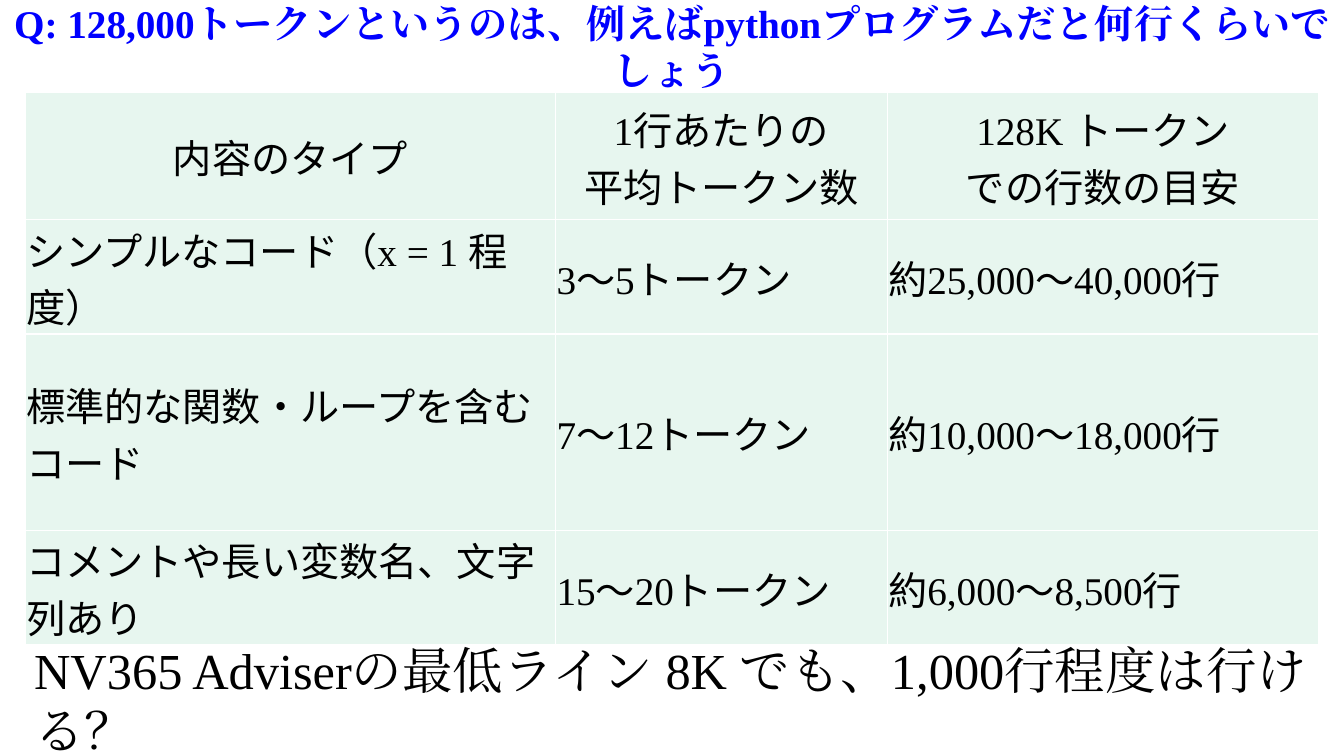
from dataclasses import dataclass

from lxml import etree
from pptx import Presentation
from pptx import util as u
from pptx.dml.color import RGBColor
from pptx.enum import text
from pptx.oxml import ns

PX = 9144  # 100 px to the inch
FONT = "Times New Roman"
BLACK, BLUE, WHITE, MINT = "000000", "0000FF", "FFFFFF", "E7F6EF"
COLUMN_WIDTHS = (526, 329, 428)
CENTER, LEFT = text.PP_ALIGN.CENTER, text.PP_ALIGN.LEFT


@dataclass(frozen=True)
class TableRow:
    height: int
    cells: tuple[str, ...]
    align: text.PP_ALIGN = LEFT


ROWS = (
    TableRow(126, ("内容のタイプ", "1行あたりの\n平均トークン数",
                   "128K トークン\nでの行数の目安"), CENTER),
    TableRow(98, ("シンプルなコード（x = 1 程度）", "3〜5トークン", "約25,000〜40,000行")),
    TableRow(195, ("標準的な関数・ループを含むコード", "7〜12トークン", "約10,000〜18,000行")),
    TableRow(98, ("コメントや長い変数名、文字列あり", "15〜20トークン", "約6,000〜8,500行")),
)


def px(length: int) -> u.Emu:
    return u.Emu(length * PX)


def color(hex_value: str) -> RGBColor:
    return RGBColor.from_string(hex_value)


def write(frame, words: str, size: int, hex_color: str, align=LEFT,
          bold: bool = False, east_asian: bool = False) -> None:
    """Fill a text frame; east_asian applies the font to Japanese letters too."""
    frame.text = words
    frame.word_wrap = True
    for para in frame.paragraphs:
        para.alignment = align
        font = para.font
        font.name, font.size, font.bold = FONT, u.Pt(size), bold
        font.color.rgb = color(hex_color)
        if east_asian:
            properties = para._p.pPr.find(ns.qn("a:defRPr"))
            etree.SubElement(properties, ns.qn("a:ea"), typeface=FONT)


def add_borders(cell, hex_color: str) -> None:
    properties = cell._tc.get_or_add_tcPr()
    for index, side in enumerate(("lnL", "lnR", "lnT", "lnB")):
        line = etree.Element(ns.qn(f"a:{side}"), w=str(u.Pt(1)))
        fill = etree.SubElement(line, ns.qn("a:solidFill"))
        etree.SubElement(fill, ns.qn("a:srgbClr"), val=hex_color)
        properties.insert(index, line)


def add_title(page) -> None:
    title = page.shapes.title
    title.left, title.top, title.width, title.height = map(px, (0, 0, 1333, 92))
    title.text_frame.vertical_anchor = text.MSO_ANCHOR.MIDDLE
    write(title.text_frame,
          "Q: 128,000トークンというのは、例えばpythonプログラムだと何行くらいでしょう",
          28, BLUE, CENTER, bold=True, east_asian=True)


def add_token_table(page) -> None:
    height = sum(row.height for row in ROWS)
    table = page.shapes.add_table(len(ROWS), len(COLUMN_WIDTHS), px(25), px(92),
                                  px(sum(COLUMN_WIDTHS)), px(height)).table
    for column, width in zip(table.columns, COLUMN_WIDTHS):
        column.width = px(width)
    table.first_row = table.horz_banding = False
    for table_row, row in zip(table.rows, ROWS):
        table_row.height = px(row.height)
        for cell, words in zip(table_row.cells, row.cells):
            cell.margin_left = cell.margin_right = cell.margin_top = px(1)
            cell.margin_bottom = 0
            cell.vertical_anchor = text.MSO_ANCHOR.MIDDLE
            cell.fill.solid()
            cell.fill.fore_color.rgb = color(MINT)
            add_borders(cell, WHITE)
            write(cell.text_frame, words, 28, BLACK, row.align)


def add_closing_question(page) -> None:
    box = page.shapes.add_textbox(*map(px, (24, 629, 1317, 71)))
    box.text_frame.auto_size = text.MSO_AUTO_SIZE.SHAPE_TO_FIT_TEXT
    write(box.text_frame, "NV365 Adviserの最低ライン 8K でも、1,000行程度は行ける？",
          36, BLACK, east_asian=True)


def main() -> None:
    deck = Presentation()
    deck.slide_width, deck.slide_height = px(1333), px(750)
    page = deck.slides.add_slide(deck.slide_layouts[5])
    add_title(page)
    add_token_table(page)
    add_closing_question(page)
    deck.save("out.pptx")


if __name__ == "__main__":
    main()
